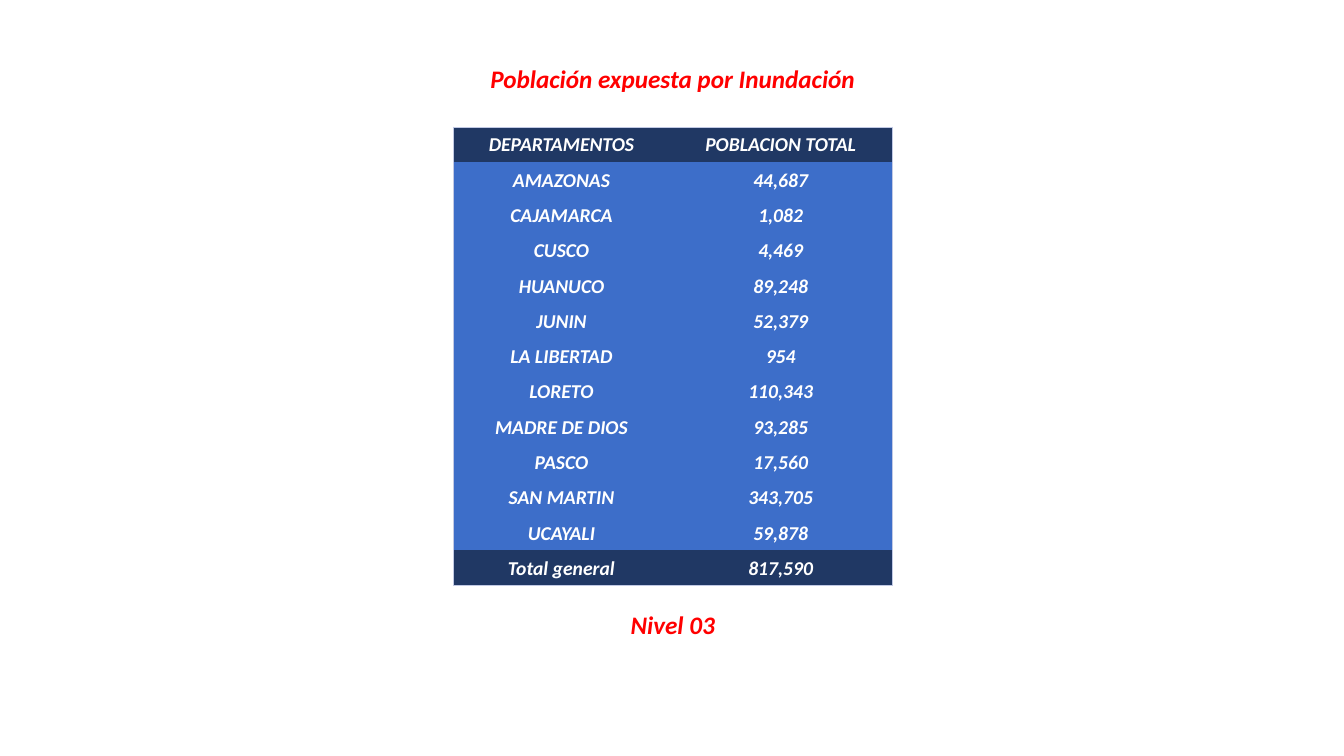
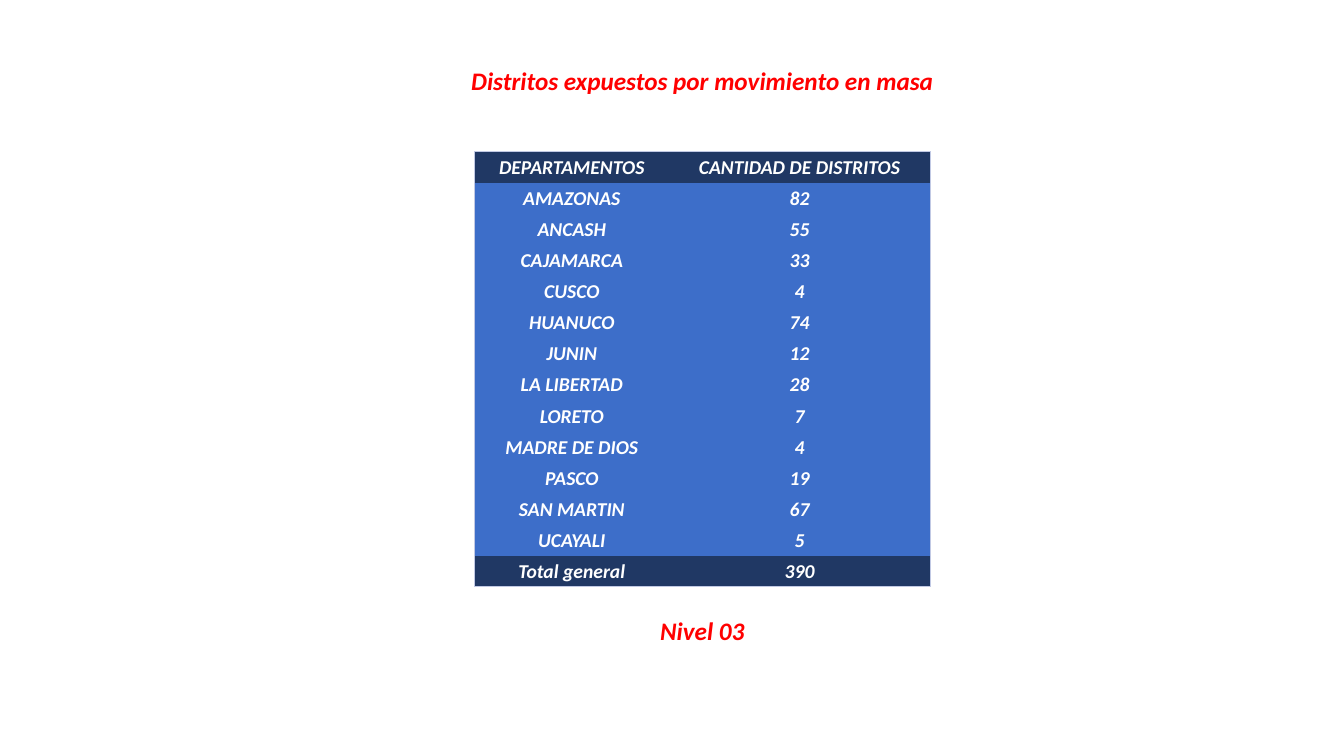
import lxml.etree
import pptx
import pptx.dml.color
import pptx.enum.text
import pptx.oxml.ns
import pptx.util

Cm = pptx.util.Cm
Pt = pptx.util.Pt
qn = pptx.oxml.ns.qn

COLORS = {
    "heading": "FF0000",
    "band": "203864",
    "body": "3D6EC9",
    "text": "FFFFFF",
    "frame": "C1C9E4",
}
FONT = "Calibri"
HEADING_HEIGHT = 1.02
PLAIN_TABLE_STYLE = "{2D5ABB26-0587-4C30-8999-92F81FD0307C}"

FLOOD_POPULATION = [
    ("DEPARTAMENTOS", "POBLACION TOTAL"),
    ("AMAZONAS", "44,687"),
    ("CAJAMARCA", "1,082"),
    ("CUSCO", "4,469"),
    ("HUANUCO", "89,248"),
    ("JUNIN", "52,379"),
    ("LA LIBERTAD", "954"),
    ("LORETO", "110,343"),
    ("MADRE DE DIOS", "93,285"),
    ("PASCO", "17,560"),
    ("SAN MARTIN", "343,705"),
    ("UCAYALI", "59,878"),
    ("Total general", "817,590"),
]
LANDSLIDE_DISTRICTS = [
    ("DEPARTAMENTOS", "CANTIDAD DE DISTRITOS"),
    ("AMAZONAS", "82"),
    ("ANCASH", "55"),
    ("CAJAMARCA", "33"),
    ("CUSCO", "4"),
    ("HUANUCO", "74"),
    ("JUNIN", "12"),
    ("LA LIBERTAD", "28"),
    ("LORETO", "7"),
    ("MADRE DE DIOS", "4"),
    ("PASCO", "19"),
    ("SAN MARTIN", "67"),
    ("UCAYALI", "5"),
    ("Total general", "390"),
]


def rgb(name):
    return pptx.dml.color.RGBColor.from_string(COLORS[name])


def write_centered(frame, text, size, color):
    """Bold italic centred line, used for headings and cells."""
    paragraph = frame.paragraphs[0]
    paragraph.alignment = pptx.enum.text.PP_ALIGN.CENTER
    run = paragraph.add_run()
    run.text = text
    run.font.name = FONT
    run.font.size = Pt(size)
    run.font.bold = run.font.italic = True
    run.font.color.rgb = rgb(color)


def add_heading(slide, text, center, top, width, wrap):
    heading = slide.shapes.add_textbox(
        Cm(center - width / 2), Cm(top), Cm(width), Cm(HEADING_HEIGHT))
    heading.text_frame.word_wrap = wrap
    heading.text_frame.auto_size = pptx.enum.text.MSO_AUTO_SIZE.SHAPE_TO_FIT_TEXT
    write_centered(heading.text_frame, text, 18, "heading")


def set_cell_borders(cell, sides):
    """Draw the frame line on the given sides, listed in the order L, R, T, B."""
    properties = cell._tc.get_or_add_tcPr()
    for position, side in enumerate(sides):
        line = lxml.etree.Element(qn("a:ln" + side), w=str(Pt(0.5)))
        fill = lxml.etree.SubElement(line, qn("a:solidFill"))
        lxml.etree.SubElement(fill, qn("a:srgbClr"), val=COLORS["frame"])
        properties.insert(position, line)


def add_department_table(slide, rows, left, top, column_widths, height):
    last = len(rows) - 1
    table = slide.shapes.add_table(
        len(rows), 2, Cm(left), Cm(top), Cm(sum(column_widths)), Cm(height)).table
    table._tbl.tblPr.find(qn("a:tableStyleId")).text = PLAIN_TABLE_STYLE
    for column, width in zip(table.columns, column_widths):
        column.width = Cm(width)

    for r, values in enumerate(rows):
        for c, value in enumerate(values):
            cell = table.cell(r, c)
            cell.margin_left = cell.margin_right = cell.margin_top = Cm(0.03)
            cell.margin_bottom = 0
            cell.vertical_anchor = pptx.enum.text.MSO_ANCHOR.MIDDLE
            cell.fill.solid()
            cell.fill.fore_color.rgb = rgb("band" if r in (0, last) else "body")
            write_centered(cell.text_frame, value, 14, "text")
            # Only the outer edge of the table is framed
            sides = ["L" if c == 0 else "R"]
            if r == 0:
                sides.append("T")
            elif r == last:
                sides.append("B")
            set_cell_borders(cell, sides)


def add_exposure_slide(deck, title, title_top, title_width, rows, box,
                       column_widths, level_top, level_width):
    """Title, table and level, all centred on the table box (left, top, height)."""
    slide = deck.slides.add_slide(deck.slide_layouts[6])
    left, top, height = box
    center = left + sum(column_widths) / 2
    add_heading(slide, title, center, title_top, title_width, False)
    add_heading(slide, "Nivel 03", center, level_top, level_width, True)
    add_department_table(slide, rows, left, top, column_widths, height)


def main():
    deck = pptx.Presentation()
    deck.slide_width, deck.slide_height = Cm(33.87), Cm(19.05)

    # Population exposed to floods
    add_exposure_slide(
        deck, "Población expuesta por Inundación", 1.47, 9.78,
        FLOOD_POPULATION, (11.43, 3.2, 11.56), (5.44, 5.61), 15.24, 2.8)

    # Districts exposed to mass movement
    add_exposure_slide(
        deck, "Distritos expuestos por movimiento en masa", 1.52, 12.29,
        LANDSLIDE_DISTRICTS, (11.96, 3.82, 10.97), (4.9, 6.58), 15.39, 4.24)

    deck.save("out.pptx")


if __name__ == "__main__":
    main()
